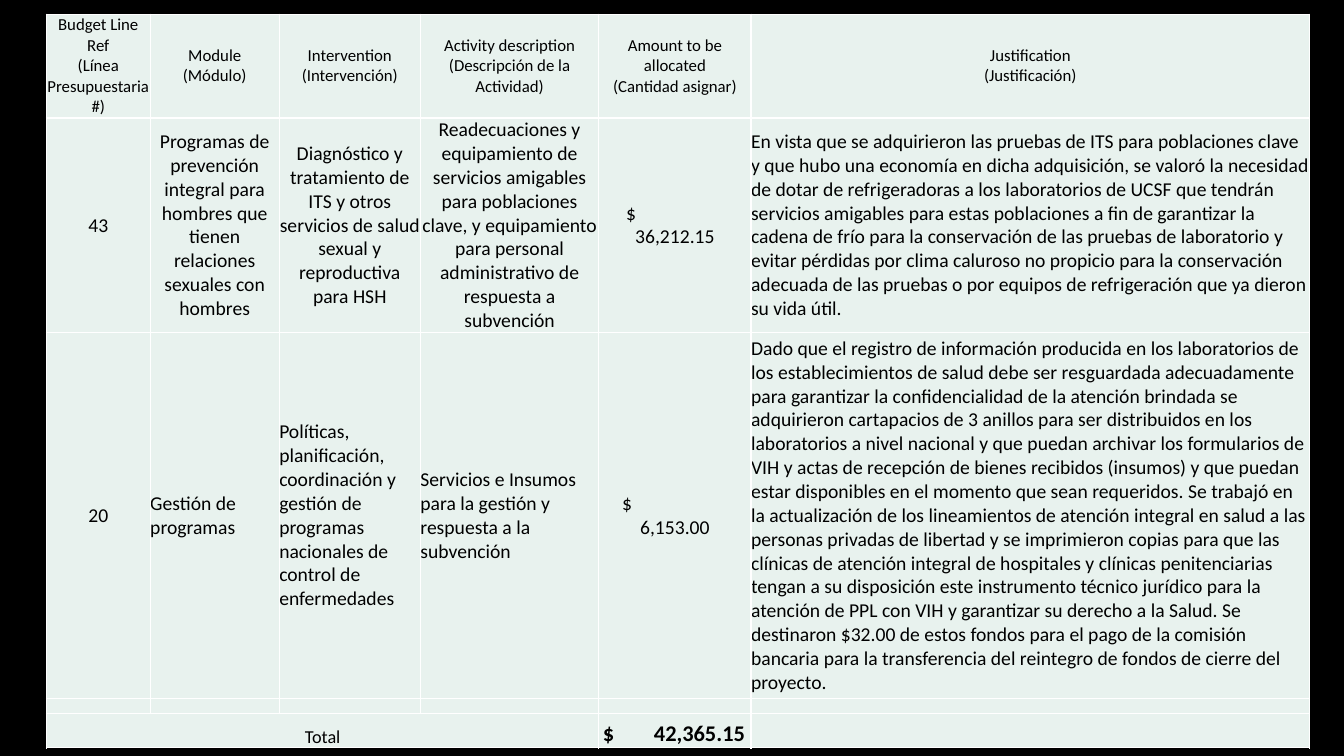
from dataclasses import dataclass

from lxml.etree import SubElement
from pptx import Presentation
from pptx.dml.color import RGBColor
from pptx.enum.text import MSO_ANCHOR as Anchor, PP_ALIGN as Align
from pptx.oxml.ns import qn
from pptx.util import Inches, Pt


@dataclass(frozen=True)
class Theme:
    font: str = "Calibri"
    backdrop: RGBColor = RGBColor(0, 0, 0)
    ink: RGBColor = RGBColor(0, 0, 0)
    cell: RGBColor = RGBColor(0xE8, 0xF2, 0xEE)
    border: str = "FFFFFF"
    header: int = 12
    body: int = 14
    total_label: int = 13
    total_amount: int = 16
    spacer: int = 8


THEME = Theme()
COLUMNS = (1.03, 1.28, 1.4, 1.77, 1.51, 5.54)
ROWS = (1.03, 2.13, 3.63, 0.15, 0.34)
AMOUNT = 4

HEADERS = (
    "Budget Line Ref\v(Línea Presupuestaria #)",
    "Module\v(Módulo)",
    "Intervention\v(Intervención)",
    "Activity description\v(Descripción de la Actividad)",
    "Amount to be allocated\v(Cantidad asignar)",
    "Justification\v(Justificación)",
)
PREVENTION = (
    "43",
    "Programas de prevención integral para hombres que tienen relaciones sexuales con hombres",
    "Diagnóstico y tratamiento de ITS y otros servicios de salud sexual y reproductiva para HSH",
    "Readecuaciones y equipamiento de servicios amigables para poblaciones clave, "
    "y equipamiento para personal administrativo de respuesta a subvención",
    "$\n36,212.15",
    "En vista que se adquirieron las pruebas de ITS para poblaciones clave y que hubo una "
    "economía en dicha adquisición, se valoró la necesidad de dotar de refrigeradoras a los "
    "laboratorios de UCSF que tendrán servicios amigables para estas poblaciones a fin de "
    "garantizar la cadena de frío para la conservación de las pruebas de laboratorio y evitar "
    "pérdidas por clima caluroso no propicio para la conservación adecuada de las pruebas o por "
    "equipos de refrigeración que ya dieron su vida útil.",
)
MANAGEMENT_REASONS = (
    "Dado que el registro de información producida en los laboratorios de los establecimientos "
    "de salud debe ser resguardada adecuadamente para garantizar la confidencialidad de la "
    "atención brindada se adquirieron cartapacios de 3 anillos para ser distribuidos en los "
    "laboratorios a nivel nacional y que puedan archivar los formularios de VIH y actas de "
    "recepción de bienes recibidos (insumos) y que puedan estar disponibles en el momento que "
    "sean requeridos.",
    "Se trabajó en la actualización de los lineamientos de atención integral "
    "en salud a las personas privadas de libertad y se imprimieron copias para que las clínicas "
    "de atención integral de hospitales y clínicas penitenciarias tengan a su disposición este "
    "instrumento técnico jurídico para la atención de PPL con VIH y garantizar su derecho a la "
    "Salud.",
    "Se destinaron $32.00 de estos fondos para el pago de la comisión bancaria para la "
    "transferencia del reintegro de fondos de cierre del proyecto.",
)
MANAGEMENT = (
    "20",
    "Gestión de programas",
    "Políticas, planificación, coordinación y gestión de programas nacionales de control de "
    "enfermedades",
    "Servicios e Insumos para la gestión y respuesta a la subvención",
    "$\n6,153.00",
    " ".join(MANAGEMENT_REASONS),
)


def style_cell(cell):
    """Give an empty cell its borders, fill, zero margins and small line height."""
    properties = cell._tc.get_or_add_tcPr()
    for side in ("lnL", "lnR", "lnT", "lnB"):
        line = SubElement(properties, qn(f"a:{side}"), w=str(Pt(1)))
        fill = SubElement(line, qn("a:solidFill"))
        SubElement(fill, qn("a:srgbClr"), val=THEME.border)
    cell.fill.solid()
    cell.fill.fore_color.rgb = THEME.cell
    cell.margin_left = cell.margin_right = cell.margin_top = cell.margin_bottom = 0
    para = cell.text_frame.paragraphs[0]
    SubElement(para._p, qn("a:endParaRPr"), sz=str(THEME.spacer * 100))


def write_cell(cell, text, size, align=Align.CENTER, anchor=Anchor.MIDDLE, bold=False):
    cell.text_frame.text = text
    cell.vertical_anchor = anchor
    for para in cell.text_frame.paragraphs:
        para.alignment = align
        for span in para.runs:
            span.font.name = THEME.font
            span.font.size = Pt(size)
            span.font.bold = bold
            span.font.color.rgb = THEME.ink


def indent_currency(cell, indent):
    """Move the currency sign, on its own line, to the left of the centred figure."""
    sign = cell.text_frame.paragraphs[0]
    sign.alignment = Align.LEFT
    sign._p.get_or_add_pPr().set("marL", str(Inches(indent)))


def add_right_tab(para, position):
    tabs = SubElement(para._p.get_or_add_pPr(), qn("a:tabLst"))
    SubElement(tabs, qn("a:tab"), pos=str(Inches(position)), algn="r")


def add_budget_table(slide):
    frame = slide.shapes.add_table(len(ROWS), len(COLUMNS), Inches(0.46), Inches(0.14),
                                   Inches(sum(COLUMNS)), Inches(sum(ROWS)))
    table = frame.table
    table.first_row = table.horz_banding = False
    for column, width in zip(table.columns, COLUMNS):
        column.width = Inches(width)
    for row, height in zip(table.rows, ROWS):
        row.height = Inches(height)
    for cell in table.iter_cells():
        style_cell(cell)
    return table


def fill_row(table, row, texts, size, left_columns=()):
    for column, text in enumerate(texts):
        align = Align.LEFT if column in left_columns else Align.CENTER
        write_cell(table.cell(row, column), text, size, align)


def fill_total(table, row):
    label, amount = table.cell(row, 0), table.cell(row, AMOUNT)
    label.merge(table.cell(row, AMOUNT - 1))
    write_cell(label, "Total", THEME.total_label, anchor=Anchor.BOTTOM)
    write_cell(amount, "$\t42,365.15", THEME.total_amount, Align.LEFT, Anchor.BOTTOM, bold=True)
    amount.margin_left = Inches(0.04)
    add_right_tab(amount.text_frame.paragraphs[0], 1.41)


def main():
    deck = Presentation()
    deck.slide_width, deck.slide_height = Inches(13.33), Inches(7.5)
    slide = deck.slides.add_slide(deck.slide_layouts[6])
    slide.background.fill.solid()
    slide.background.fill.fore_color.rgb = THEME.backdrop

    table = add_budget_table(slide)
    fill_row(table, 0, HEADERS, THEME.header)
    fill_row(table, 1, PREVENTION, THEME.body, left_columns=(5,))
    fill_row(table, 2, MANAGEMENT, THEME.body, left_columns=(1, 2, 3, 5))
    indent_currency(table.cell(1, AMOUNT), 0.27)
    indent_currency(table.cell(2, AMOUNT), 0.23)
    fill_total(table, 4)
    deck.save("out.pptx")


if __name__ == "__main__":
    main()
